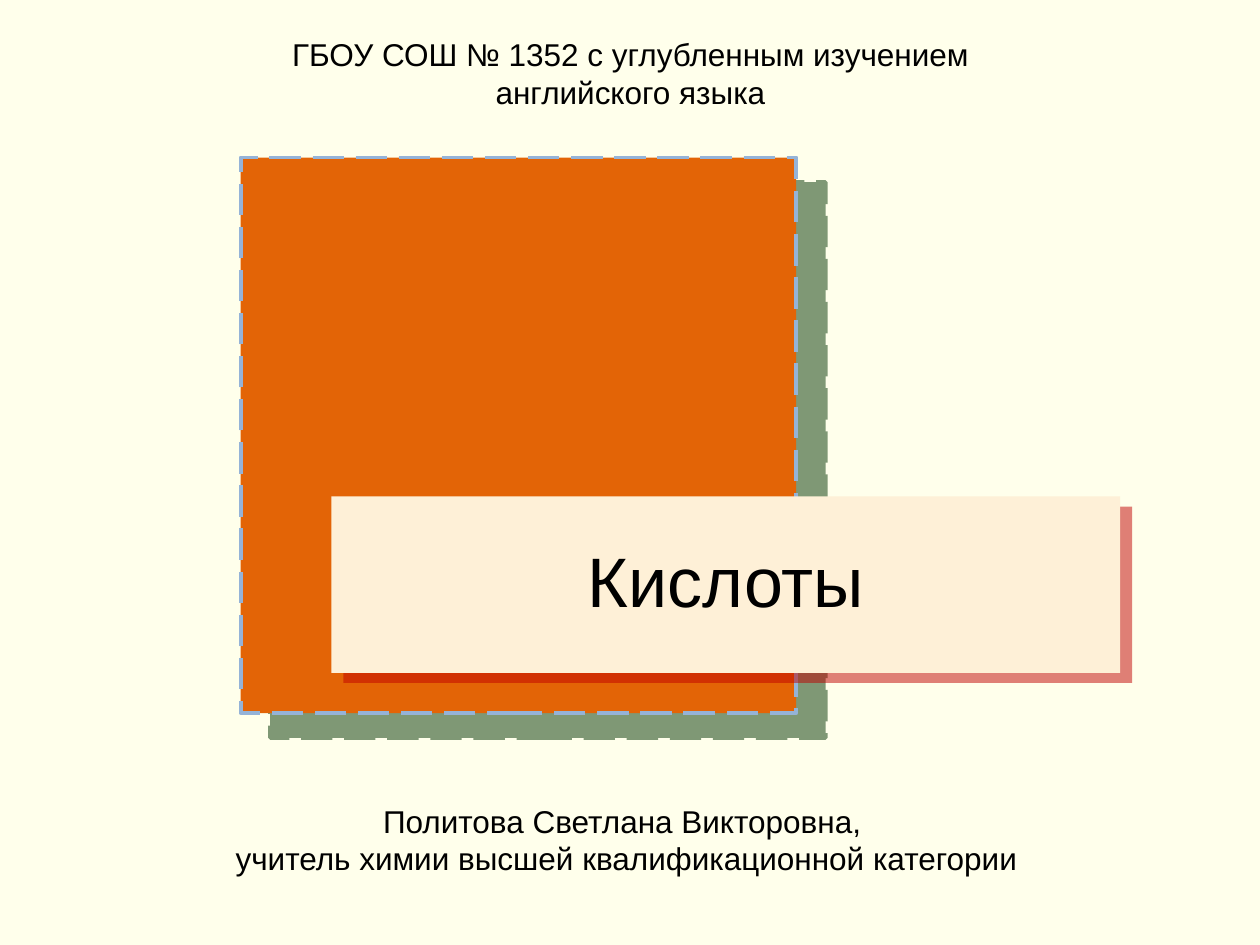
import pptx
import pptx.util
import pptx.dml.color
import pptx.enum.dml
import pptx.enum.shapes
import pptx.enum.text
import pptx.oxml
import pptx.oxml.ns

Pt = pptx.util.Pt
SHAPES = pptx.enum.shapes.MSO_SHAPE

COLORS = {
    "background": "FFFFEB",
    "square": "E36406",
    "square_border": "95B3D7",
    "square_shadow": "003300",
    "banner": "FEF0D7",
    "banner_shadow": "C00000",
    "text": "000000",
}
FONT = "Arial"

SCHOOL = ["ГБОУ СОШ № 1352 с углубленным изучением английского языка"]
TITLE = ["Кислоты"]
TEACHER = [
    "Политова Светлана Викторовна, ",
    "учитель химии высшей квалификационной категории",
]

# left, top, width, height in points
SQUARE_BOX = (137.5, 90, 317.5, 317.5)
BANNER_BOX = (189.4, 283.7, 450.7, 100.8)
SCHOOL_BOX = (132.5, 16.5, 455.7, 51)
TEACHER_BOX = (18.7, 450, 683.3, 55.4)


def rgb(name):
    return pptx.dml.color.RGBColor.from_string(COLORS[name])


def add_panel(slide, box, geometry, fill=None):
    panel = slide.shapes.add_shape(geometry, *map(Pt, box))
    panel.shadow.inherit = False
    panel.line.fill.background()
    if fill:
        panel.fill.solid()
        panel.fill.fore_color.rgb = rgb(fill)
    else:
        panel.fill.background()
    return panel


def cast_shadow(panel, color, distance):
    """Add a half-transparent shadow falling at 40 degrees."""
    effects = panel.element.spPr.find(pptx.oxml.ns.qn("a:effectLst"))
    effects.append(pptx.oxml.parse_xml(
        f'<a:outerShdw {pptx.oxml.ns.nsdecls("a")} blurRad="0" dist="{Pt(distance)}" '
        f'dir="{40 * 60000}" algn="tl" rotWithShape="0">'
        f'<a:srgbClr val="{COLORS[color]}"><a:alpha val="50000"/></a:srgbClr>'
        f'</a:outerShdw>'))


def write(holder, lines, size, inset=None, spacing=None,
          anchor=pptx.enum.text.MSO_ANCHOR.TOP):
    frame = holder.text_frame
    frame.word_wrap = True
    frame.vertical_anchor = anchor
    if inset is not None:
        frame.margin_left = frame.margin_right = Pt(inset)
        frame.margin_top = frame.margin_bottom = Pt(inset)
    for index, line in enumerate(lines):
        paragraph = frame.add_paragraph() if index else frame.paragraphs[0]
        paragraph.alignment = pptx.enum.text.PP_ALIGN.CENTER
        paragraph.line_spacing = spacing
        run = paragraph.add_run()
        run.text = line
        run.font.name = FONT
        run.font.size = Pt(size)
        run.font.color.rgb = rgb("text")


def main():
    deck = pptx.Presentation()
    deck.slide_width, deck.slide_height = Pt(720), Pt(540)
    slide = deck.slides.add_slide(deck.slide_layouts[6])
    slide.background.fill.solid()
    slide.background.fill.fore_color.rgb = rgb("background")

    square = add_panel(slide, SQUARE_BOX, SHAPES.RECTANGLE, "square")
    square.line.color.rgb = rgb("square_border")
    square.line.width = Pt(2.25)
    square.line.dash_style = pptx.enum.dml.MSO_LINE.LONG_DASH
    cast_shadow(square, "square_shadow", 22)

    banner = add_panel(slide, BANNER_BOX, SHAPES.RECTANGLE, "banner")
    cast_shadow(banner, "banner_shadow", 9)
    write(banner, TITLE, 40, inset=12, spacing=0.9,
          anchor=pptx.enum.text.MSO_ANCHOR.MIDDLE)

    school = slide.shapes.add_textbox(*map(Pt, SCHOOL_BOX))
    write(school, SCHOOL, 18)

    teacher = add_panel(slide, TEACHER_BOX, SHAPES.SNIP_1_RECTANGLE)
    write(teacher, TEACHER, 18)
    for frame in (school.text_frame, teacher.text_frame):
        frame.auto_size = pptx.enum.text.MSO_AUTO_SIZE.SHAPE_TO_FIT_TEXT

    deck.save("out.pptx")


if __name__ == "__main__":
    main()
